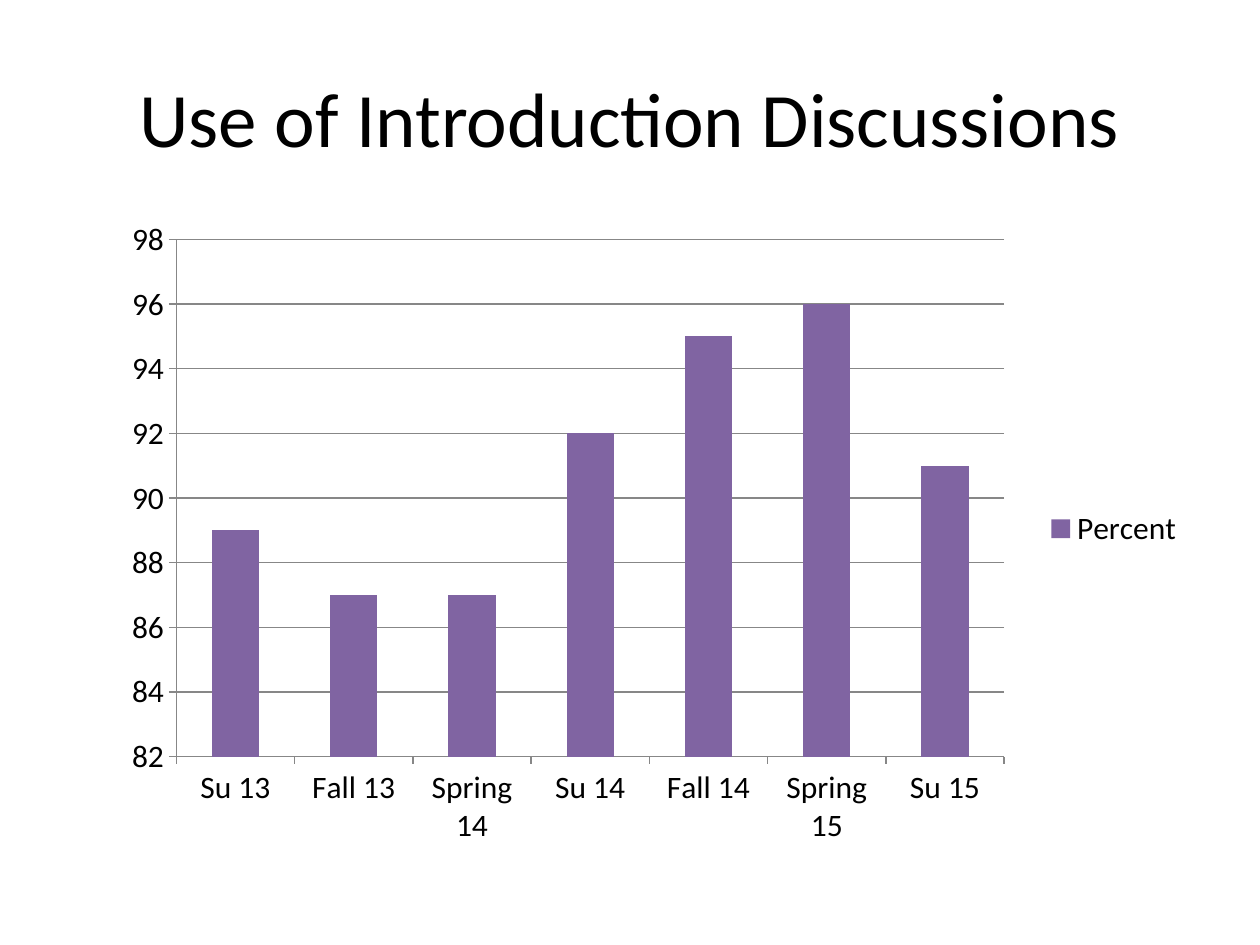
from dataclasses import dataclass

from lxml import etree
from pptx import Presentation
from pptx.chart.data import CategoryChartData
from pptx.dml.color import RGBColor
from pptx.enum import chart as chart_enum, text
from pptx.oxml import ns
from pptx.util import Inches, Pt


@dataclass(frozen=True)
class Theme:
    font: str = "Calibri"
    ink: RGBColor = RGBColor(0x00, 0x00, 0x00)
    bar: RGBColor = RGBColor(0x80, 0x64, 0xA2)
    rule: RGBColor = RGBColor(0x87, 0x87, 0x87)
    title_size: Pt = Pt(44)
    chart_size: Pt = Pt(18)
    rule_width: Pt = Pt(0.75)


THEME = Theme()
TERMS = ["Su 13", "Fall 13", "Spring 14", "Su 14", "Fall 14", "Spring 15", "Su 15"]
PERCENTS = [89, 87, 87, 92, 95, 96, 91]


def style_font(font, size):
    font.name = THEME.font
    font.size = size
    font.color.rgb = THEME.ink


def style_line(line):
    line.color.rgb = THEME.rule
    line.width = THEME.rule_width


def add_title(slide, box, wording):
    frame = slide.shapes.add_textbox(*box).text_frame
    frame.word_wrap = True
    frame.vertical_anchor = text.MSO_ANCHOR.MIDDLE
    paragraph = frame.paragraphs[0]
    paragraph.alignment = text.PP_ALIGN.CENTER
    run = paragraph.add_run()
    run.text = wording
    style_font(run.font, THEME.title_size)


def set_plot_layout(chart, x, y, w, h):
    """Fix the inner plot area, in fractions of the chart."""
    plot_area = chart.plots[0]._element.getparent()
    for old_layout in plot_area.findall(ns.qn("c:layout")):
        plot_area.remove(old_layout)
    layout = etree.Element(ns.qn("c:layout"))
    manual = etree.SubElement(layout, ns.qn("c:manualLayout"))
    settings = {"layoutTarget": "inner", "xMode": "edge", "yMode": "edge",
                "x": x, "y": y, "w": w, "h": h}
    for name, value in settings.items():
        etree.SubElement(manual, ns.qn(f"c:{name}")).set("val", str(value))
    plot_area.insert(0, layout)


def add_percent_chart(slide, box):
    data = CategoryChartData()
    data.categories = TERMS
    data.add_series("Percent", PERCENTS)
    chart = slide.shapes.add_chart(
        chart_enum.XL_CHART_TYPE.COLUMN_CLUSTERED, *box, data).chart
    chart.has_title = False
    style_font(chart.font, THEME.chart_size)

    # Columns
    plot = chart.plots[0]
    plot.gap_width = 150
    plot.vary_by_categories = False
    fill = plot.series[0].format.fill
    fill.solid()
    fill.fore_color.rgb = THEME.bar

    # Axes and gridlines
    for axis in (chart.category_axis, chart.value_axis):
        axis.major_tick_mark = chart_enum.XL_TICK_MARK.OUTSIDE
        axis.minor_tick_mark = chart_enum.XL_TICK_MARK.NONE
        style_line(axis.format.line)
    chart.category_axis.has_major_gridlines = False
    values = chart.value_axis
    values.minimum_scale, values.maximum_scale, values.major_unit = 82, 98, 2
    values.has_major_gridlines = True
    style_line(values.major_gridlines.format.line)

    # Legend and plot position
    chart.has_legend = True
    chart.legend.position = chart_enum.XL_LEGEND_POSITION.RIGHT
    chart.legend.include_in_layout = False
    set_plot_layout(chart, 0.1, 0.03, 0.73, 0.84)


def main():
    presentation = Presentation()
    presentation.slide_width = Inches(10)
    presentation.slide_height = Inches(7.5)
    slide = presentation.slides.add_slide(presentation.slide_layouts[6])

    add_title(slide, (Inches(0.5), Inches(0.3), Inches(9), Inches(1.25)),
              "Use of Introduction Discussions")
    add_percent_chart(slide, (Inches(0.5), Inches(1.75), Inches(9), Inches(4.95)))
    presentation.save("out.pptx")


if __name__ == "__main__":
    main()
